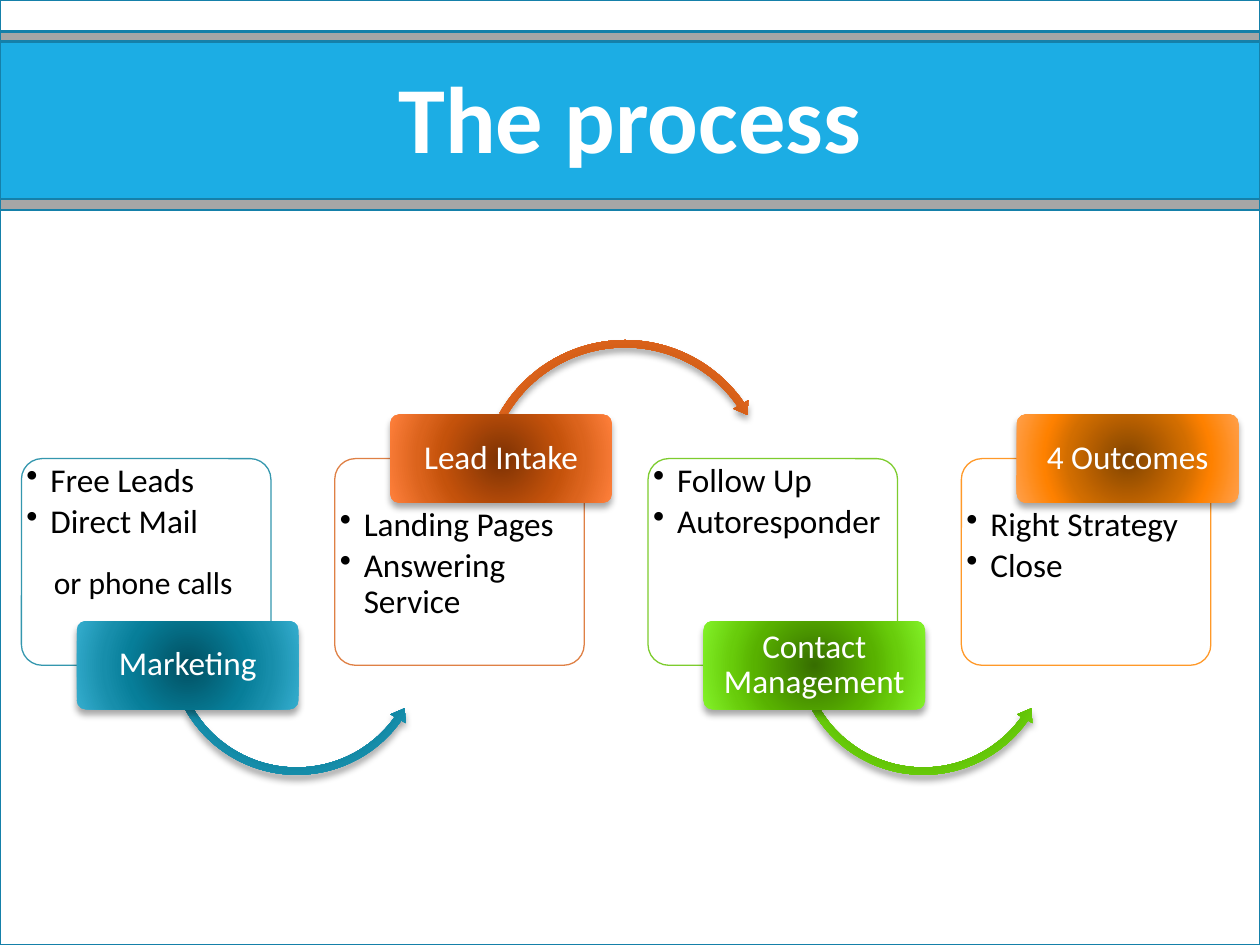
"""Build the four-step process slide with alternating labels and circular arrows."""
from pptx import Presentation
from pptx.dml.color import RGBColor
from pptx.enum.shapes import MSO_SHAPE
from pptx.enum.text import MSO_ANCHOR, PP_ALIGN
from pptx.oxml import parse_xml
from pptx.oxml.ns import nsdecls, qn
from pptx.util import Inches, Pt

RECT, ROUND = MSO_SHAPE.RECTANGLE, MSO_SHAPE.ROUNDED_RECTANGLE
CENTER, LEFT = PP_ALIGN.CENTER, PP_ALIGN.LEFT
TOP, MIDDLE = MSO_ANCHOR.TOP, MSO_ANCHOR.MIDDLE

FONT = "Calibri"
BANDS = [(0, 7.5, "FFFFFF"), (0.25, 1.42, "A6A6A6"), (0.33, 1.25, "1CADE4")]
STEPS = [
    ("Marketing", ["Free Leads", "Direct Mail"], "3497AE",
     ["015062", "077E99", "178EAB", "35ADCE"]),
    ("Lead Intake", ["Landing Pages", "Answering Service"], "DF8045",
     ["7D3203", "C4520B", "DB631C", "FF803C"]),
    ("Contact Management", ["Follow Up", "Autoresponder"], "7DCC2E",
     ["376E00", "58B100", "68CC0B", "83F229"]),
    ("4 Outcomes", ["Right Strategy", "Close"], "FF9929",
     ["824400", "D16D00", "FE8100", "FFA04B"]),
]
STOPS = [0, 50, 70, 100]
ARROW_BELOW = (MSO_SHAPE.LEFT_CIRCULAR_ARROW, 1.13, 4.08, 2.11,
               [0.028, 3.407, 21.163, 90.245, 0.033])
ARROW_ABOVE = (MSO_SHAPE.CIRCULAR_ARROW, 1.12, 2.66, 2.37,
               [0.025, 3.021, 195.224, 125.755, 0.029])
FIRST_X, LAST_X = 0.17, 7.63
BOX_Y, BOX_W, BOX_H = 3.64, 1.98, 1.64
LABEL_DX, LABEL_W, LABEL_H = 0.44, 1.76, 0.7
BODY_H = 1.29


def rgb(color):
    return RGBColor.from_string(color)


def add_shape(slide, kind, x, y, w, h, fill=None, line=None, width=1.25, adj=()):
    sp = slide.shapes.add_shape(kind, Inches(x), Inches(y), Inches(w), Inches(h))
    sp.shadow.inherit = False
    for i, value in enumerate(adj):
        sp.adjustments[i] = value
    if fill:
        sp.fill.solid()
        sp.fill.fore_color.rgb = rgb(fill)
    if line:
        sp.line.color.rgb = rgb(line)
        sp.line.width = Pt(width)
    else:
        sp.line.fill.background()
    return sp


def glow(sp, colors):
    stops = "".join(
        f'<a:gs pos="{pos * 1000}"><a:srgbClr val="{color}"/></a:gs>'
        for pos, color in zip(STOPS, colors))
    sp.fill.background()
    sp_pr = sp._element.spPr
    sp_pr.replace(sp_pr.find(qn("a:noFill")), parse_xml(
        f'<a:gradFill {nsdecls("a")} rotWithShape="1"><a:gsLst>{stops}</a:gsLst>'
        '<a:path path="circle"><a:fillToRect l="50000" t="50000" r="50000" b="50000"/>'
        '</a:path></a:gradFill>'))
    sp_pr.find(qn("a:effectLst")).append(parse_xml(
        f'<a:outerShdw {nsdecls("a")} blurRad="{Pt(4)}" dist="{Pt(3)}" dir="5400000" '
        'rotWithShape="0"><a:srgbClr val="000000"><a:alpha val="35000"/></a:srgbClr>'
        '</a:outerShdw>'))


def add_text_box(slide, x, y, w, h):
    return slide.shapes.add_textbox(Inches(x), Inches(y), Inches(w), Inches(h))


def write(sp, lines, size=19, color="000000", bold=False, align=LEFT, anchor=TOP,
          inset=(0.1, 0.05), spacing=None, after=0, bullet=False, wrap=True):
    tf = sp.text_frame
    tf.word_wrap = wrap
    tf.vertical_anchor = anchor
    tf.margin_left = tf.margin_right = Inches(inset[0])
    tf.margin_top = tf.margin_bottom = Inches(inset[1])
    for i, line in enumerate(lines):
        p = tf.paragraphs[0] if i == 0 else tf.add_paragraph()
        p.alignment = align
        p.line_spacing = spacing
        p.space_after = Pt(after)
        if bullet:
            p_pr = p._p.get_or_add_pPr()
            p_pr.set("marL", str(Inches(0.19)))
            p_pr.set("indent", str(Inches(-0.19)))
            p_pr.append(parse_xml(f'<a:buChar {nsdecls("a")} char="•"/>'))
        r = p.add_run()
        r.text = line
        r.font.name, r.font.size, r.font.bold = FONT, Pt(size), bold
        r.font.color.rgb = rgb(color)


def add_step(slide, i, label, bullets, line, colors):
    x = FIRST_X + i * (LAST_X - FIRST_X) / (len(STEPS) - 1)
    above = i % 2 == 1
    label_y = BOX_Y - LABEL_H / 2 if above else BOX_Y + BODY_H
    body_y = BOX_Y + LABEL_H / 2 if above else BOX_Y

    box = add_shape(slide, ROUND, x, BOX_Y, BOX_W, BOX_H, "FFFFFF", line, 0.75, [0.1])
    box.fill._xPr.find(qn("a:solidFill"))[0].append(
        parse_xml(f'<a:alpha {nsdecls("a")} val="90000"/>'))
    write(add_text_box(slide, x, body_y, BOX_W, BODY_H), bullets,
          inset=(0.04, 0.04), spacing=0.9, after=3, bullet=True)

    if i < len(STEPS) - 1:
        kind, dx, y, size, adj = ARROW_ABOVE if above else ARROW_BELOW
        glow(add_shape(slide, kind, x + dx, y, size, size, adj=adj), colors)

    tab = add_shape(slide, ROUND, x + LABEL_DX, label_y, LABEL_W, LABEL_H, adj=[0.1])
    glow(tab, colors)
    write(tab, [label], color="FFFFFF", align=CENTER, anchor=MIDDLE,
          inset=(0.04, 0.03), spacing=0.9)


def main():
    prs = Presentation()
    prs.slide_width, prs.slide_height = Inches(10), Inches(7.5)
    slide = prs.slides.add_slide(prs.slide_layouts[6])
    for y, h, fill in BANDS:
        add_shape(slide, RECT, 0, y, 10, h, fill, "1580A9")
    write(add_text_box(slide, 0, 0.42, 10, 1.01), ["The process"],
          size=54, color="FFFFFF", bold=True, align=CENTER)
    for i, step in enumerate(STEPS):
        add_step(slide, i, *step)
    write(add_text_box(slide, 0.33, 4.42, 1.64, 0.4), ["or phone calls"],
          size=18, wrap=False)
    prs.save("out.pptx")


if __name__ == "__main__":
    main()
